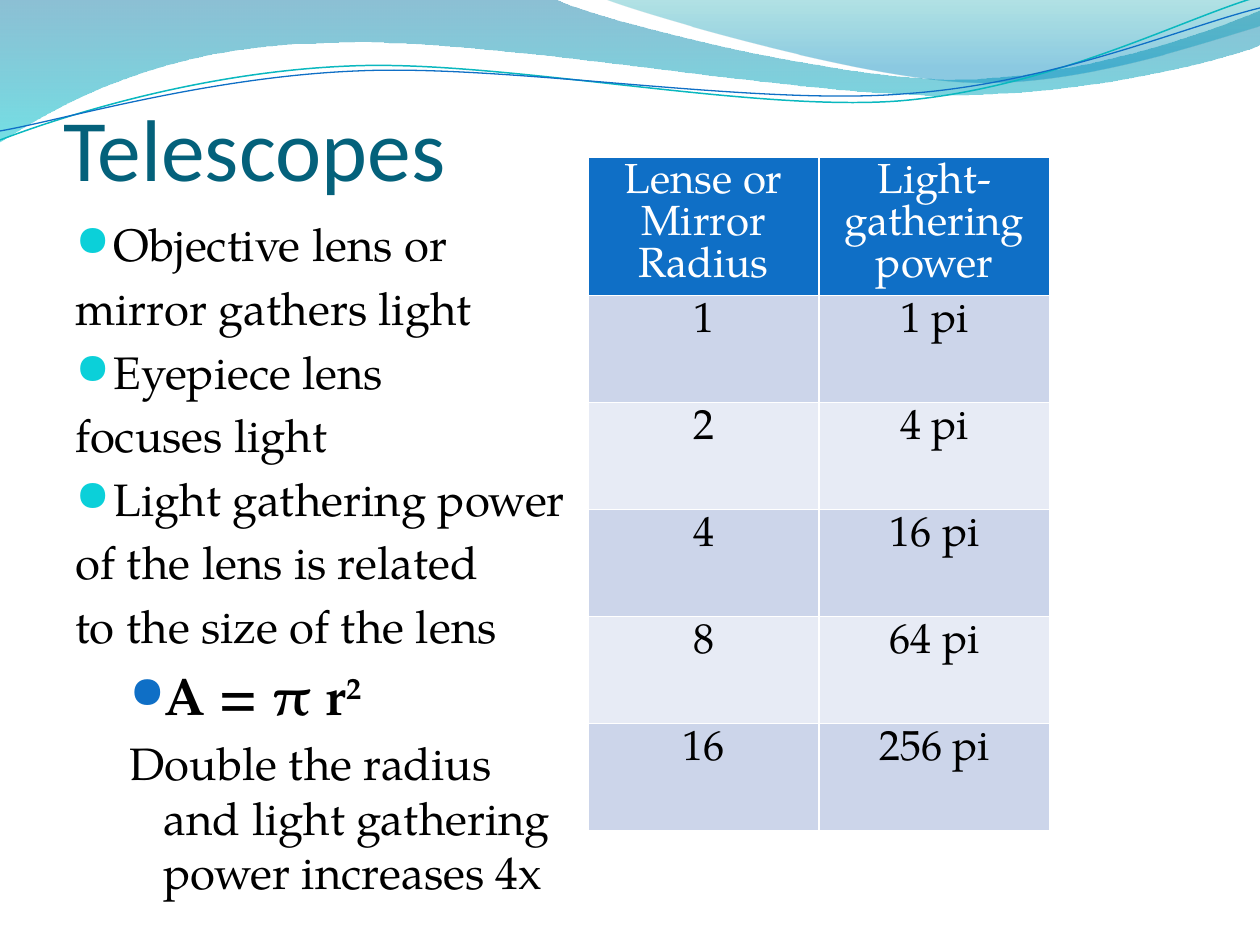
"""Build the Telescopes slide: wave header, bulleted notes and a light-gathering table."""
from dataclasses import dataclass
from typing import Optional

from lxml import etree
from pptx import Presentation
from pptx import util as u
from pptx.dml.color import RGBColor
from pptx.enum import text
from pptx.oxml.ns import qn

PX = 914400 / 126
SERIF, SANS, SYMBOL = "TeX Gyre Pagella", "Calibri", "OpenSymbol"
WHITE = RGBColor(0xFF, 0xFF, 0xFF)
BLACK = RGBColor(0, 0, 0)
TITLE = RGBColor(0x04, 0x61, 0x7B)
BLUE = RGBColor(0x0F, 0x6F, 0xC6)
CYAN = RGBColor(0x0B, 0xD0, 0xD9)
TEAL = RGBColor(0x0A, 0xB8, 0xBF)
BANDS = (RGBColor(0xCC, 0xD5, 0xEA), RGBColor(0xE7, 0xEB, 0xF5))


@dataclass
class Stop:
    position: float
    color: RGBColor
    alpha: int


@dataclass
class Wave:
    """An outline whose segments hold one point (line) or three (Bezier)."""
    start: tuple
    segments: list
    stops: tuple = ()
    color: Optional[RGBColor] = None
    width: float = 0


@dataclass
class Item:
    runs: list
    level: int = 0
    bullet: bool = False
    size: int = 26
    bold: bool = False


WAVES = [
    Wave((0, 0), [
        [(554, -1)],
        [(600, 21), (837, 79), (955, 79)],
        [(1075, 79), (1207, 33), (1260, 11)],
        [(1261, 45)],
        [(1239, 55), (1096, 96), (940, 95)],
        [(784, 95), (481, 35), (324, 43)],
        [(163, 45), (58, 105), (-1, 142)],
        [(0, 0)],
    ], (Stop(0, RGBColor(0, 0x74, 0xA1), 45), Stop(1, RGBColor(0, 0xC6, 0xCF), 55))),
    Wave((604, -1), [
        [(641, 14), (859, 78), (969, 82)],
        [(1079, 87), (1211, 40), (1260, 26)],
        [(1260, 0)],
        [(604, -1)],
    ], (Stop(0, RGBColor(0, 0xA1, 0xA9), 30), Stop(0.8, RGBColor(0, 0x8B, 0xBF), 45))),
    Wave((0, 140), [
        [(60, 117), (199, 72), (349, 66)],
        [(498, 59), (747, 112), (898, 101)],
        [(1049, 89), (1182, 19), (1257, -3)],
    ], color=TEAL, width=0.85),
    Wave((0, 131), [
        [(59, 121), (207, 77), (357, 71)],
        [(508, 64), (752, 106), (903, 94)],
        [(1053, 84), (1186, 26), (1260, 8)],
    ], color=BLUE, width=0.75),
]
ITEMS = [
    Item(["Objective lens or"], bullet=True),
    Item(["mirror gathers light"]),
    Item(["Eyepiece lens"], bullet=True),
    Item(["focuses light"]),
    Item(["Light gathering power"], bullet=True),
    Item(["of the lens is related"]),
    Item(["to the size of the lens"]),
    Item(["A = π r", "2"], level=1, bullet=True, size=30, bold=True),
    Item(["Double the radius and light gathering power increases 4x"], level=1),
]
HEADER = ("Lense or Mirror Radius", "Light-gathering power")
RADII = (1, 2, 4, 8, 16)


def px(n: float) -> int:
    """Turn px into EMU."""
    return u.Emu(round(n * PX))


def sub(parent, tag: str, **attrs: str):
    """Append a DrawingML child element."""
    return etree.SubElement(parent, qn(f"a:{tag}"), attrs)


def place(sp, left: int, top: int, width: int, height: int) -> None:
    """Move and size a shape in px."""
    sp.left, sp.top, sp.width, sp.height = map(px, (left, top, width, height))


def add_run(p, words: str, size: int, color: RGBColor, font: str = SERIF, bold: bool = False):
    """Add one formatted run to a paragraph."""
    r = p.add_run()
    r.text = words
    r.font.size, r.font.name, r.font.bold = u.Pt(size), font, bold
    r.font.color.rgb = color
    return r


def bend(sp, segments: list) -> None:
    """Turn the straight segments that have control points into Bezier curves."""
    lines = list(sp._element.spPr.iter(qn("a:lnTo")))
    for line, seg in zip(lines, segments):
        if len(seg) == 3:
            line.tag = qn("a:cubicBezTo")
            for pt in list(line):
                line.remove(pt)
            for x, y in seg:
                sub(line, "pt", x=str(px(x) - sp.left), y=str(px(y) - sp.top))


def draw_wave(slide, wave: Wave) -> None:
    """Draw a gradient-filled band or an open curve."""
    builder = slide.shapes.build_freeform(*map(px, wave.start))
    ends = [(px(x), px(y)) for x, y in (seg[-1] for seg in wave.segments)]
    builder.add_line_segments(ends, close=bool(wave.stops))
    sp = builder.convert_to_shape()
    bend(sp, wave.segments)
    sp.shadow.inherit = False
    if not wave.stops:
        sp.fill.background()
        sp.line.color.rgb = wave.color
        sp.line.width = u.Pt(wave.width)
        return
    sp.line.fill.background()
    sp.fill.gradient()
    sp.fill.gradient_angle = 270
    for gs, stop in zip(sp.fill.gradient_stops, wave.stops):
        gs.position, gs.color.rgb = stop.position, stop.color
    for clr, stop in zip(sp._element.spPr.iter(qn("a:srgbClr")), wave.stops):
        sub(clr, "alpha", val=str(stop.alpha * 1000))


def draw_title(sp) -> None:
    """Format the title placeholder."""
    place(sp, 63, 42, 1134, 157)
    tf = sp.text_frame
    tf.auto_size, tf.vertical_anchor = text.MSO_AUTO_SIZE.NONE, text.MSO_ANCHOR.BOTTOM
    tf.margin_left = tf.margin_right = tf.margin_bottom = 0
    p = tf.paragraphs[0]
    p.alignment = text.PP_ALIGN.LEFT
    add_run(p, "Telescopes", 50, TITLE, SANS)


def draw_items(sp, items: list) -> None:
    """Fill the body placeholder with its list."""
    place(sp, 63, 210, 518, 662)
    tf = sp.text_frame
    tf.word_wrap, tf.auto_size = True, text.MSO_AUTO_SIZE.NONE
    for i, item in enumerate(items):
        p = tf.add_paragraph() if i else tf.paragraphs[0]
        p.level = item.level
        pPr = p._p.get_or_add_pPr()
        margin, hang = ((38, 38), (88, 34))[item.level]
        pPr.set("marL", str(px(margin)))
        pPr.set("indent", str(-px(hang)))
        if item.bullet:
            sub(sub(pPr, "buClr"), "srgbClr", val=str((CYAN, BLUE)[item.level]))
            sub(pPr, "buSzPct", val=("95000", "85000")[item.level])
            sub(pPr, "buFont", typeface=SYMBOL)
            sub(pPr, "buChar", char="●")
        else:
            sub(pPr, "buNone")
        if not i:
            p.space_before = u.Pt(0)
        base, *raised = item.runs
        add_run(p, base, item.size, BLACK, bold=item.bold)
        for words in raised:
            r = add_run(p, words, item.size, BLACK, bold=item.bold)
            r._r.get_or_add_rPr().set("baseline", "30000")


def draw_cell(cell, words: str, fill: RGBColor, color: RGBColor) -> None:
    """Write a centred cell with thin white borders."""
    tcPr = cell._tc.get_or_add_tcPr()
    for side in "LRTB":
        ln = sub(tcPr, f"ln{side}", w=str(u.Pt(1)))
        sub(sub(ln, "solidFill"), "srgbClr", val=str(WHITE))
    cell.fill.solid()
    cell.fill.fore_color.rgb = fill
    p = cell.text_frame.paragraphs[0]
    p.alignment, p.line_spacing = text.PP_ALIGN.CENTER, u.Pt(24)
    add_run(p, words, 24, color)


def draw_table(slide) -> None:
    """Draw the radius and light-gathering table."""
    rows = [HEADER] + [(str(n), f"{n * n} pi") for n in RADII]
    box = map(px, (588, 157, 462, 107 * len(rows)))
    table = slide.shapes.add_table(len(rows), len(HEADER), *box).table
    for i, row in enumerate(rows):
        look = (BANDS[(i - 1) % 2], BLACK) if i else (BLUE, WHITE)
        for j, words in enumerate(row):
            draw_cell(table.cell(i, j), words, *look)


def main() -> None:
    """Build and save the slide."""
    prs = Presentation()
    prs.slide_width, prs.slide_height = px(1260), px(945)
    slide = prs.slides.add_slide(prs.slide_layouts[1])
    title, body = slide.placeholders
    for wave in WAVES:
        draw_wave(slide, wave)
    for sp in (title, body):
        slide.shapes._spTree.append(sp._element)
    draw_title(title)
    draw_items(body, ITEMS)
    draw_table(slide)
    prs.save("out.pptx")


if __name__ == "__main__":
    main()
